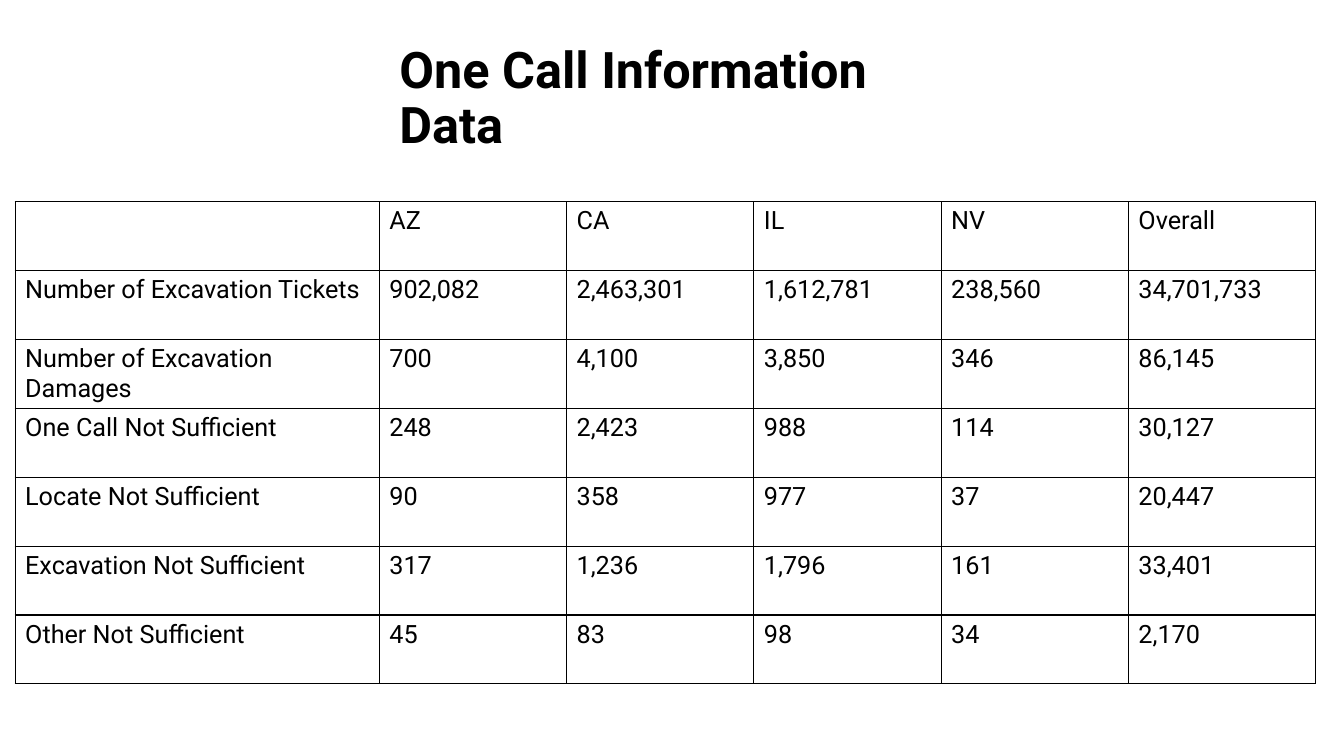
from lxml import etree
from pptx import Presentation
from pptx import util as u
from pptx.dml.color import RGBColor
from pptx.enum import text
from pptx.oxml.ns import qn

COLORS = {"ink": "000000", "paper": "FFFFFF"}
FONT = "Roboto"
SLIDE_WIDTH, SLIDE_HEIGHT = u.Inches(13.33), u.Inches(7.5)
LABEL_SHARE, STATE_SHARE = 0.28, 0.144
ROWS = [
    ["", "AZ", "CA", "IL", "NV", "Overall"],
    ["Number of Excavation Tickets", "902,082", "2,463,301", "1,612,781", "238,560", "34,701,733"],
    ["Number of Excavation Damages", "700", "4,100", "3,850", "346", "86,145"],
    ["One Call Not Sufficient", "248", "2,423", "988", "114", "30,127"],
    ["Locate Not Sufficient", "90", "358", "977", "37", "20,447"],
    ["Excavation Not Sufficient", "317", "1,236", "1,796", "161", "33,401"],
    ["Other Not Sufficient", "45", "83", "98", "34", "2,170"],
]


def format_font(font, size, bold=False):
    font.name = FONT
    font.size = u.Pt(size)
    font.bold = bold
    font.color.rgb = RGBColor.from_string(COLORS["ink"])


def add_title(slide, wording):
    title = slide.shapes.title
    title.left, title.top = u.Inches(3.86), u.Inches(0.55)
    title.width, title.height = u.Inches(5.94), u.Inches(0.88)
    frame = title.text_frame
    frame.text = wording
    frame.word_wrap = True
    frame.auto_size = text.MSO_AUTO_SIZE.NONE
    frame.vertical_anchor = text.MSO_ANCHOR.MIDDLE
    paragraph = frame.paragraphs[0]
    paragraph.alignment = text.PP_ALIGN.LEFT
    paragraph.line_spacing = 0.9
    format_font(paragraph.runs[0].font, 36, bold=True)


def add_borders(cell):
    properties = cell._tc.get_or_add_tcPr()
    for position, side in enumerate(("lnL", "lnR", "lnT", "lnB")):
        line = etree.Element(qn(f"a:{side}"), w=str(u.Pt(1)))
        fill = etree.SubElement(line, qn("a:solidFill"))
        etree.SubElement(fill, qn("a:srgbClr"), val=COLORS["ink"])
        properties.insert(position, line)


def fill_cell(cell, wording):
    cell.fill.solid()
    cell.fill.fore_color.rgb = RGBColor.from_string(COLORS["paper"])
    cell.text_frame.text = wording
    paragraph = cell.text_frame.paragraphs[0]
    format_font(paragraph.font, 18)
    for run in paragraph.runs:
        format_font(run.font, 18)
    add_borders(cell)


def add_data_table(slide, rows):
    width, height = u.Inches(12.9), u.Inches(4.78)
    frame = slide.shapes.add_table(
        len(rows), len(rows[0]), u.Inches(0.15), u.Inches(2), width, height)
    table = frame.table
    table.first_row = table.horz_banding = False
    for index, column in enumerate(table.columns):
        column.width = int(width * (STATE_SHARE if index else LABEL_SHARE))
    for row, wordings in zip(table.rows, rows):
        row.height = height // len(rows)
        for cell, wording in zip(row.cells, wordings):
            fill_cell(cell, wording)


def main():
    presentation = Presentation()
    presentation.slide_width, presentation.slide_height = SLIDE_WIDTH, SLIDE_HEIGHT
    slide = presentation.slides.add_slide(presentation.slide_layouts.get_by_name("Title Only"))
    add_title(slide, "One Call Information Data")
    add_data_table(slide, ROWS)
    presentation.save("out.pptx")


if __name__ == "__main__":
    main()
